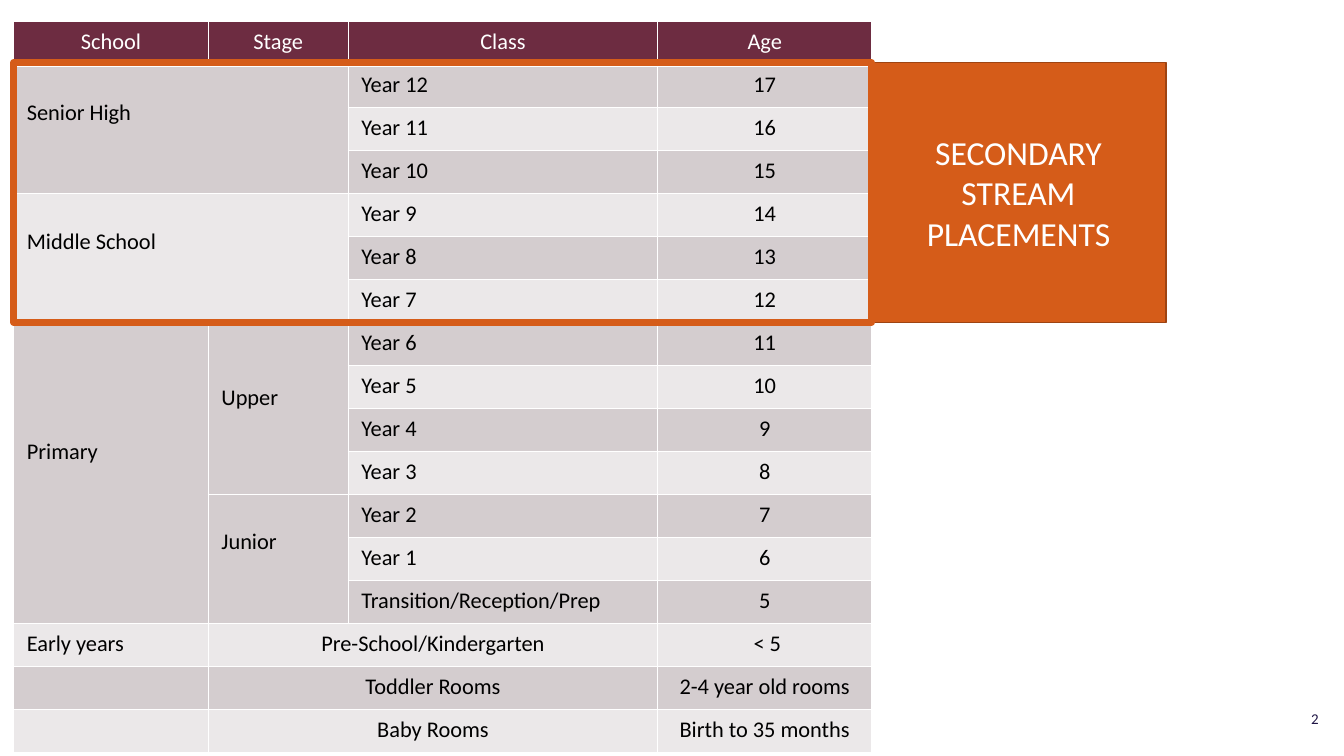
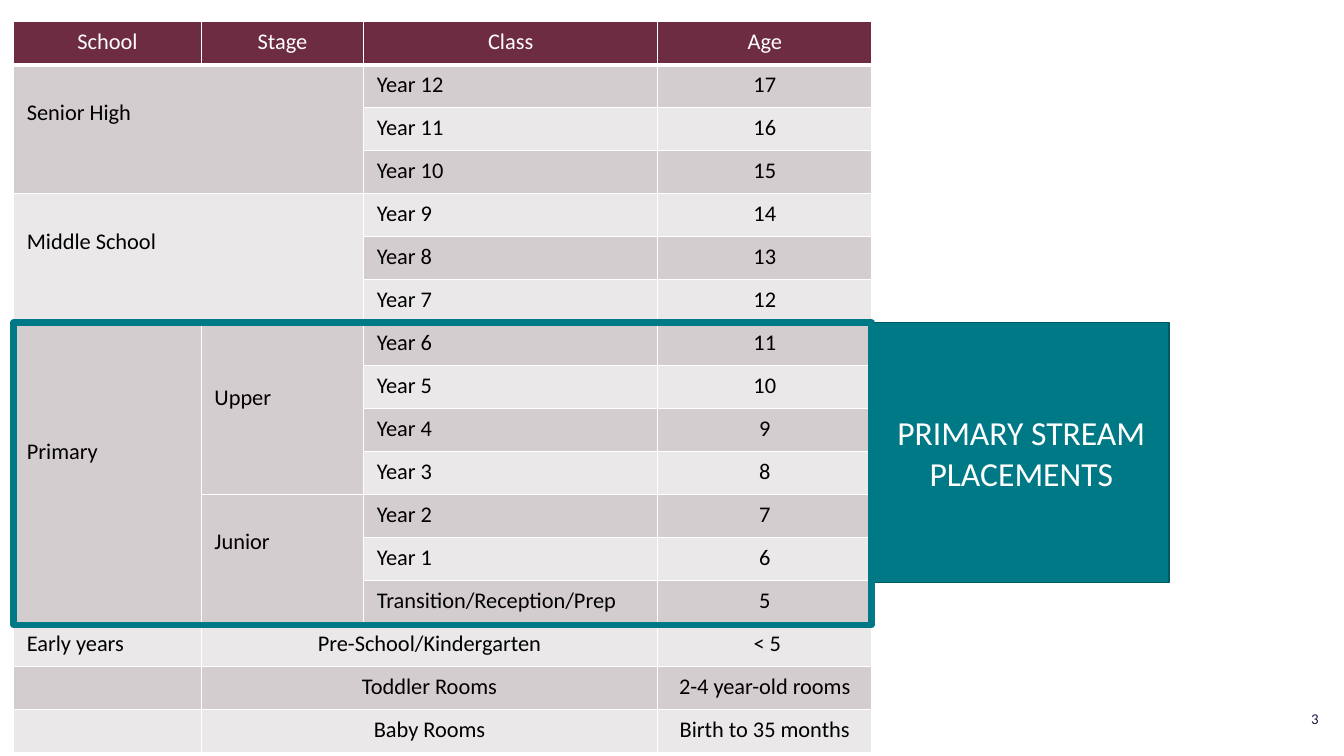
from lxml import etree
from pptx import Presentation
from pptx.dml.color import RGBColor
from pptx.enum.shapes import MSO_SHAPE as SHAPE
from pptx.enum.text import MSO_ANCHOR as ANCHOR, PP_ALIGN as ALIGN
from pptx.oxml.ns import qn
from pptx.util import Pt

FONT = "Calibri"
COLORS = {
    "header": "6D2C41", "dark_row": "D4CDCF", "light_row": "EBE8E9",
    "white": "FFFFFF", "black": "000000", "number": "201645",
    "orange": "D55C19", "orange_edge": "9E4412",
    "teal": "007987", "teal_edge": "005A64",
}

LEFT, TOP, ROW_H = 9.8, 15.5, 30.7
TEXT_SIZE, LINE_H = 16, 19.5
PAD_X, PAD_Y = 9.4, 4.9

HEADINGS = ["School", "Stage", "Class", "Age"]
CLASSES = [f"Year {year}" for year in range(12, 0, -1)] + ["Transition/Reception/Prep"]
# row, column, rows spanned, columns spanned, label, lines the label is lowered by
GROUPS = [
    (1, 0, 3, 2, "Senior High", 1),
    (4, 0, 3, 2, "Middle School", 1),
    (7, 0, 7, 1, "Primary", 4),
    (7, 1, 4, 1, "Upper", 2),
    (11, 1, 3, 1, "Junior", 1),
]


def rgb(name):
    return RGBColor.from_string(COLORS[name])


def add_text(tf, text, size, color, align):
    p = tf.paragraphs[0]
    p.alignment = align
    r = p.add_run()
    r.text = text
    r.font.name, r.font.size = FONT, Pt(size)
    r.font.color.rgb = rgb(color)


def set_margins(box, x, top, bottom):
    box.margin_left = box.margin_right = Pt(x)
    box.margin_top, box.margin_bottom = Pt(top), Pt(bottom)


def style_cell(cell, row):
    """Give a cell its white borders and the fill of its row."""
    tc_pr = cell._tc.get_or_add_tcPr()
    for side in ("lnL", "lnR", "lnT", "lnB"):
        heavy = (side, row) in (("lnB", 0), ("lnT", 1))
        ln = etree.SubElement(tc_pr, qn(f"a:{side}"), w=str(Pt(3 if heavy else 1)))
        fill = etree.SubElement(ln, qn("a:solidFill"))
        etree.SubElement(fill, qn("a:srgbClr"), val=COLORS["white"])
    cell.fill.solid()
    shade = "header" if row == 0 else "dark_row" if row % 2 else "light_row"
    cell.fill.fore_color.rgb = rgb(shade)


def write_cell(cell, text, align=ALIGN.CENTER, color="black", lowered=0):
    set_margins(cell, PAD_X, PAD_Y + lowered * LINE_H, PAD_Y)
    add_text(cell.text_frame, text, TEXT_SIZE, color, align)


def add_school_table(s, left, top, widths, toddler_age):
    early_years = [("Pre-School/Kindergarten", " < 5"),
                   ("Toddler Rooms", toddler_age),
                   ("Baby Rooms", "Birth to 35 months")]
    first_early = 1 + len(CLASSES)
    n_rows = first_early + len(early_years)
    table = s.shapes.add_table(n_rows, len(widths), Pt(left), Pt(top),
                               Pt(sum(widths)), Pt(n_rows * ROW_H)).table
    for column, width in zip(table.columns, widths):
        column.width = Pt(width)
    for i, row in enumerate(table.rows):
        row.height = Pt(ROW_H)
        for cell in row.cells:
            style_cell(cell, i)

    for col, heading in enumerate(HEADINGS):
        write_cell(table.cell(0, col), heading, color="white")
    for i, name in enumerate(CLASSES):
        write_cell(table.cell(i + 1, 2), name, ALIGN.LEFT)
        write_cell(table.cell(i + 1, 3), str(17 - i))
    for row, col, n_down, n_across, label, lowered in GROUPS:
        cell = table.cell(row, col)
        cell.merge(table.cell(row + n_down - 1, col + n_across - 1))
        write_cell(cell, label, ALIGN.LEFT, lowered=lowered)
    write_cell(table.cell(first_early, 0), "Early years", ALIGN.LEFT)
    for row, (room, age) in enumerate(early_years, first_early):
        table.cell(row, 1).merge(table.cell(row, 2))
        write_cell(table.cell(row, 1), room)
        write_cell(table.cell(row, 3), age)


def add_box(s, left, top, width, height, line, line_width):
    sp = s.shapes.add_shape(SHAPE.RECTANGLE, Pt(left), Pt(top), Pt(width), Pt(height))
    sp.shadow.inherit = False
    sp.line.color.rgb, sp.line.width = rgb(line), Pt(line_width)
    return sp


def add_callout(s, left, top, text, color):
    sp = add_box(s, left, top, 211, 185.8, f"{color}_edge", 1)
    sp.fill.solid()
    sp.fill.fore_color.rgb = rgb(color)
    tf = sp.text_frame
    tf.word_wrap, tf.vertical_anchor = True, ANCHOR.MIDDLE
    set_margins(tf, PAD_X, PAD_Y, PAD_Y)
    add_text(tf, text, 24, "white", ALIGN.CENTER)


def add_slide_number(s, number):
    tf = s.shapes.add_textbox(Pt(912), Pt(499), Pt(37), Pt(29)).text_frame
    tf.word_wrap, tf.vertical_anchor = True, ANCHOR.MIDDLE
    add_text(tf, str(number), 10.7, "number", ALIGN.RIGHT)


def add_stream_slide(prs, number, widths, toddler_age, band, callout_left, text, color):
    """Add the school table with one band of rows outlined and named."""
    s = prs.slides.add_slide(prs.slide_layouts[6])
    band_top, band_height = band
    add_slide_number(s, number)
    add_school_table(s, LEFT, TOP, widths, toddler_age)
    add_callout(s, callout_left, band_top, text, color)
    outline = add_box(s, LEFT - 0.2, band_top, sum(widths), band_height, color, 4.5)
    outline.fill.background()


def main():
    prs = Presentation()
    prs.slide_width, prs.slide_height = Pt(960), Pt(540)
    add_stream_slide(prs, 2, [139, 100, 221, 153], "2-4 year old rooms",
                     (44.6, 185.8), 622, "SECONDARY STREAM PLACEMENTS", "orange")
    add_stream_slide(prs, 3, [134, 116, 210, 153], "2-4 year-old rooms",
                     (TOP + 7 * ROW_H, 216), 624, "PRIMARY STREAM PLACEMENTS", "teal")
    prs.save("out.pptx")


if __name__ == "__main__":
    main()
